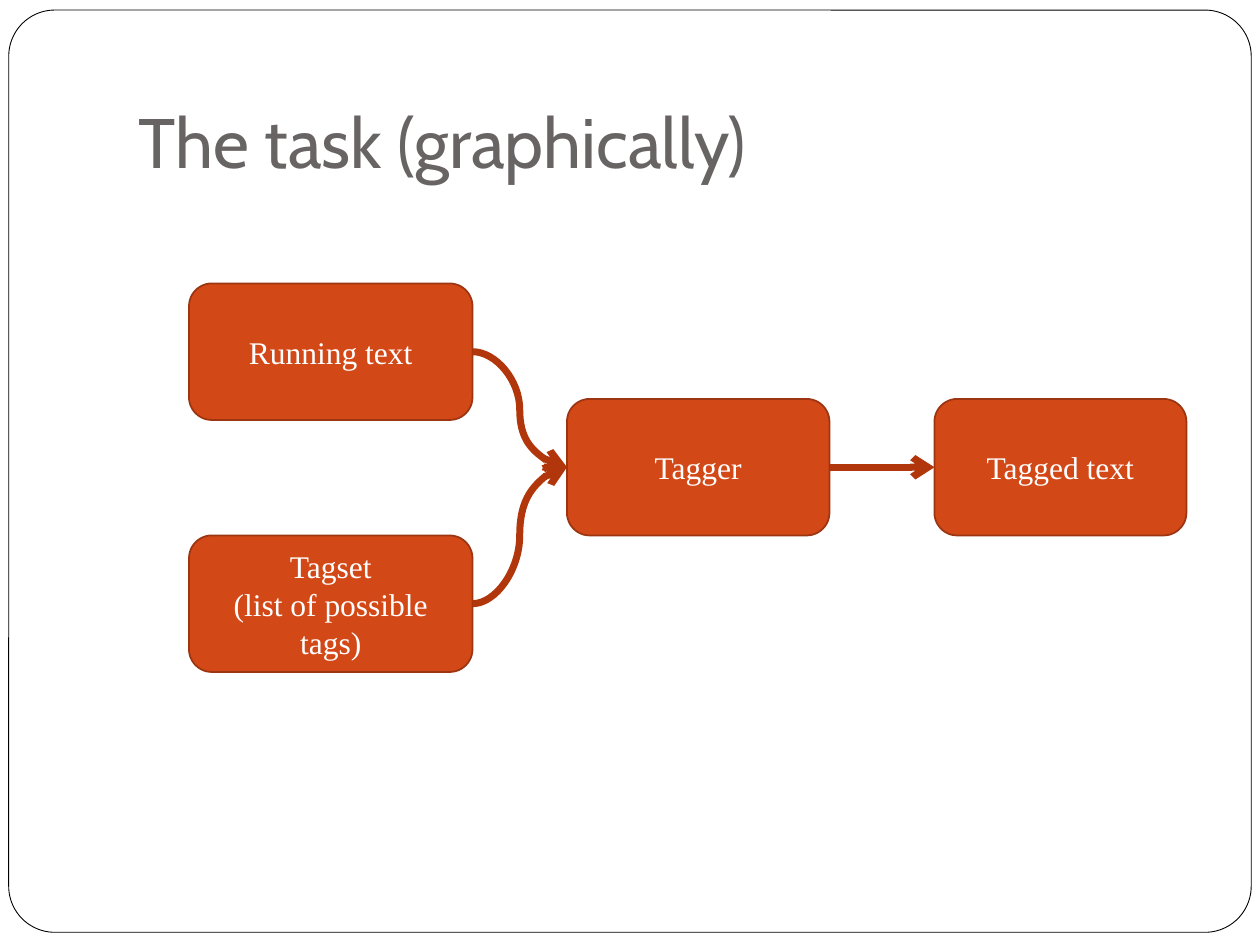
from lxml import etree
from pptx import Presentation
from pptx.dml.color import RGBColor
from pptx.enum.shapes import MSO_CONNECTOR, MSO_SHAPE
from pptx.enum.text import MSO_ANCHOR, PP_ALIGN
from pptx.oxml.ns import qn
from pptx.util import Pt

ROUNDED = MSO_SHAPE.ROUNDED_RECTANGLE
CURVE = MSO_CONNECTOR.CURVE
CENTER = PP_ALIGN.CENTER
MIDDLE = MSO_ANCHOR.MIDDLE
BOTTOM = MSO_ANCHOR.BOTTOM
LEFT_SITE, RIGHT_SITE = 1, 3
BOX_HEIGHT = 78


def color(hex_string):
    return RGBColor.from_string(hex_string)


def add_rounded(page, left, top, width, height, fill, line, line_width):
    box = page.shapes.add_shape(ROUNDED, Pt(left), Pt(top), Pt(width), Pt(height))
    box.shadow.inherit = False
    box.fill.solid()
    box.fill.fore_color.rgb = color(fill)
    box.line.color.rgb = color(line)
    box.line.width = Pt(line_width)
    return box


def add_span(para, text, font, size, hex_string):
    span = para.add_run()
    span.text = text
    span.font.name = font
    span.font.size = Pt(size)
    span.font.color.rgb = color(hex_string)


def add_frame(page):
    frame = add_rounded(page, 5, 5.75, 710, 527, "FFFFFF", "000000", 0.5)
    frame.adjustments[0] = 0.05


def add_title(page, text):
    box = page.shapes.add_textbox(Pt(72), Pt(21.6), Pt(612), Pt(90))
    frame = box.text_frame
    frame.word_wrap = True
    frame.vertical_anchor = BOTTOM
    frame.margin_bottom = Pt(7.2)
    add_span(frame.paragraphs[0], text, "Cabin", 40, "696464")


def add_step(page, left, top, width, lines):
    box = add_rounded(page, left, top, width, BOX_HEIGHT, "D34817", "9C3511", 1)
    frame = box.text_frame
    frame.word_wrap = True
    frame.vertical_anchor = MIDDLE
    for index, text in enumerate(lines):
        para = frame.add_paragraph() if index else frame.paragraphs[0]
        para.alignment = CENTER
        add_span(para, text, "Times New Roman", 18, "FFFFFF")
    return box


def add_arrow(page, source, target):
    """Curved arrow from the right side of source to the left side of target."""
    arrow = page.shapes.add_connector(CURVE, 0, 0, 0, 0)
    arrow.begin_connect(source, RIGHT_SITE)
    arrow.end_connect(target, LEFT_SITE)
    arrow.line.color.rgb = color("B1360B")
    arrow.line.width = Pt(4)
    properties = arrow.element.spPr
    etree.SubElement(properties.find(qn("a:ln")), qn("a:tailEnd"), type="arrow")
    etree.SubElement(properties, qn("a:effectLst"))


def main():
    deck = Presentation()
    deck.slide_width, deck.slide_height = Pt(720), Pt(540)
    page = deck.slides.add_slide(deck.slide_layouts[6])

    add_frame(page)
    add_title(page, "The task (graphically)")

    running_text = add_step(page, 108, 162, 162, ["Running text"])
    tagset = add_step(page, 108, 306, 162, ["Tagset", "(list of possible tags)"])
    tagger = add_step(page, 324, 228, 150, ["Tagger"])
    tagged_text = add_step(page, 534, 228, 144, ["Tagged text"])

    for source, target in [(running_text, tagger), (tagset, tagger), (tagger, tagged_text)]:
        add_arrow(page, source, target)

    deck.save("out.pptx")


if __name__ == "__main__":
    main()
